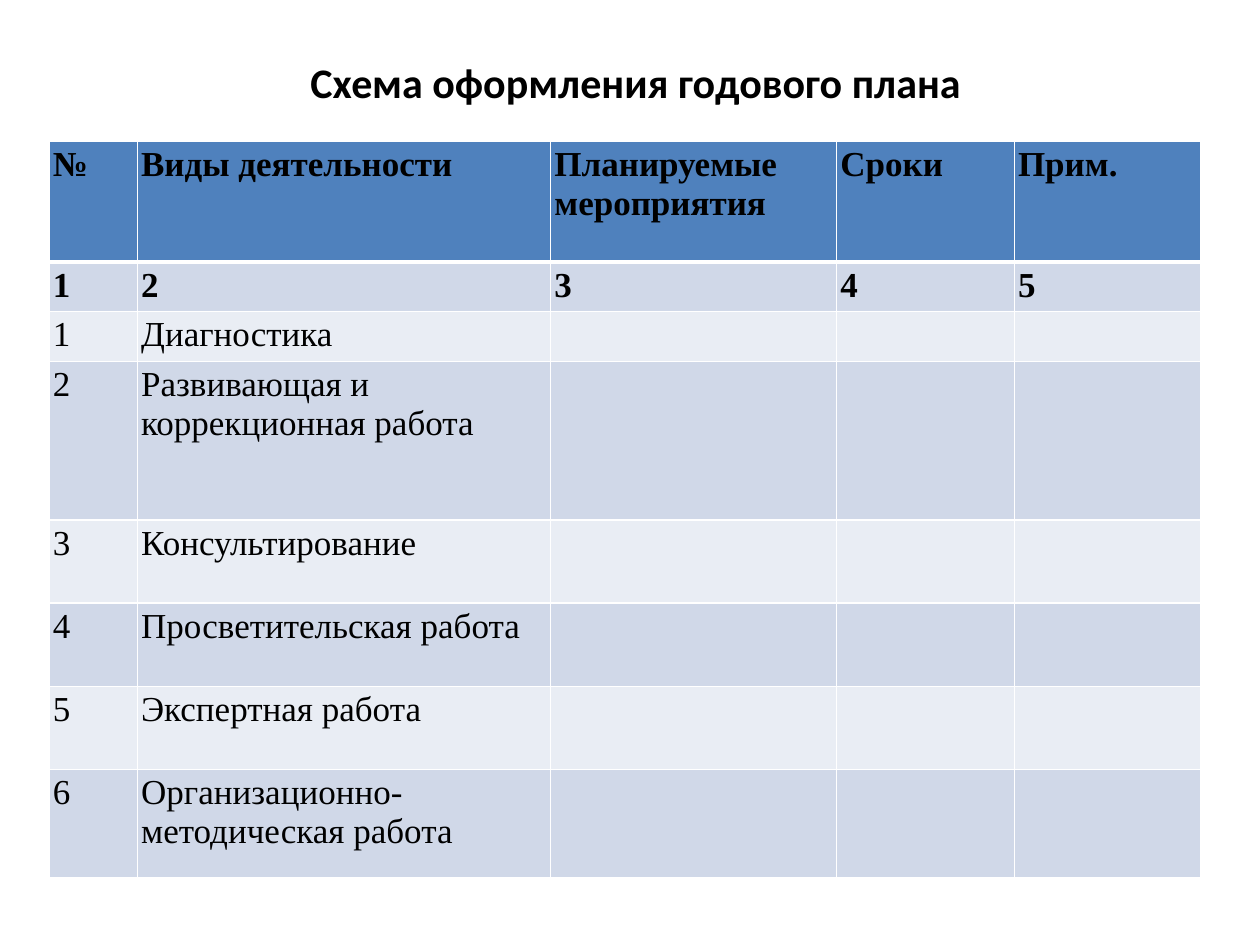
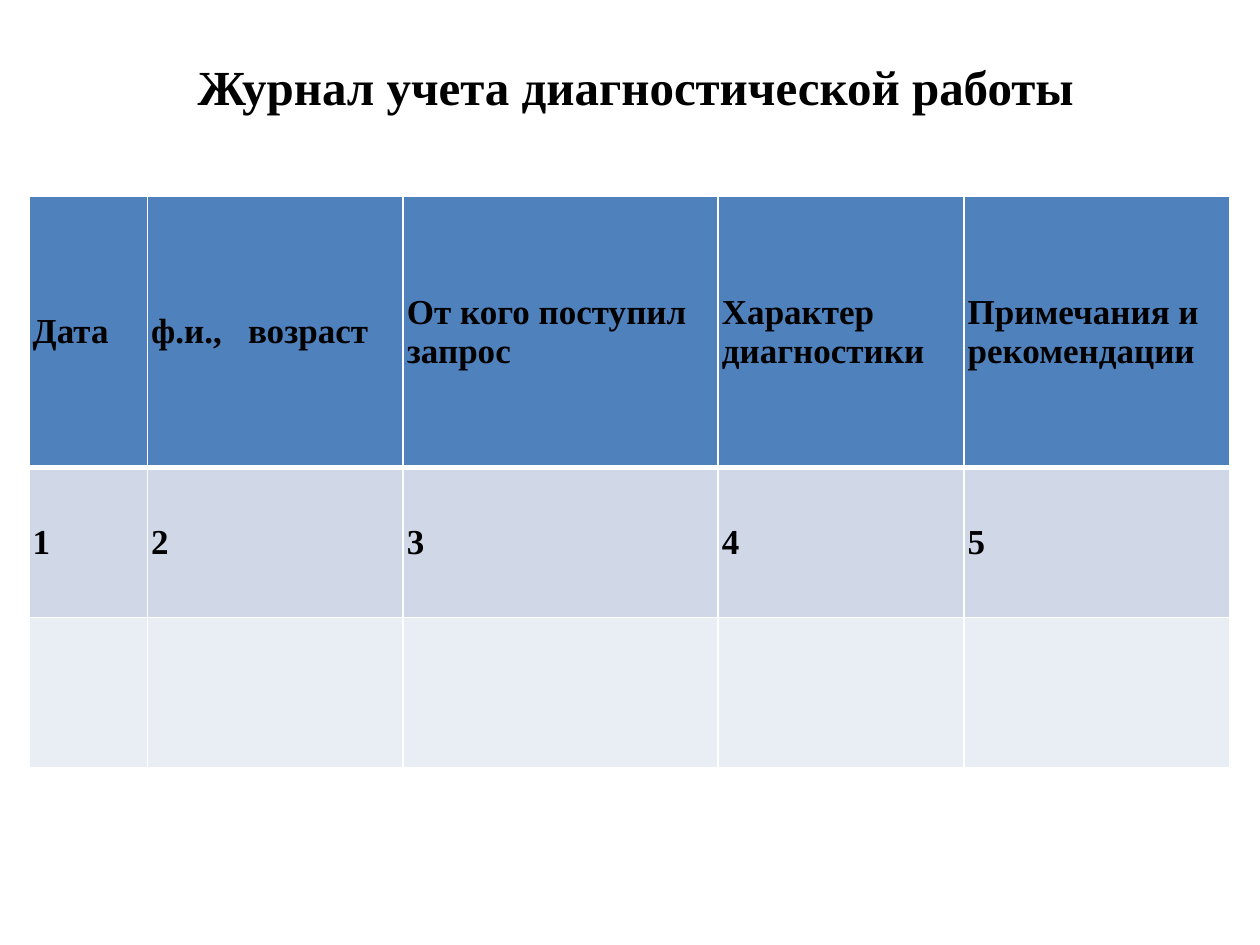
from lxml import etree
from pptx import Presentation
from pptx import util as u
from pptx.dml.color import RGBColor
from pptx.enum import text
from pptx.oxml.ns import qn

BLACK, WHITE = "000000", "FFFFFF"
HEADER_FILL = "4F81BD"
BAND_FILLS = ("E9EDF4", "D0D8E8")  # even rows, odd rows
TABLE_FONT = "Times New Roman"
CELL_MARGIN = u.Inches(0.03)
THIN, THICK = 1, 3


def color(hex_string):
    return RGBColor.from_string(hex_string)


def set_font(paragraph, name, size, bold):
    font = paragraph.font
    font.name, font.size, font.bold = name, u.Pt(size), bold
    font.color.rgb = color(BLACK)


def add_title(slide, box, words, font_name, size):
    """Bold centred heading in the middle of its box."""
    shape = slide.shapes.add_textbox(*map(u.Inches, box))
    frame = shape.text_frame
    frame.word_wrap = True
    frame.vertical_anchor = text.MSO_ANCHOR.MIDDLE
    paragraph = frame.paragraphs[0]
    paragraph.text = words
    paragraph.alignment = text.PP_ALIGN.CENTER
    set_font(paragraph, font_name, size, True)


def set_borders(cell, top, bottom):
    """White rules; the sides are always thin."""
    properties = cell._tc.get_or_add_tcPr()
    for side, points in (("L", THIN), ("R", THIN), ("T", top), ("B", bottom)):
        line = etree.SubElement(properties, qn(f"a:ln{side}"), w=str(u.Pt(points)))
        fill = etree.SubElement(line, qn("a:solidFill"))
        etree.SubElement(fill, qn("a:srgbClr"), val=WHITE)


def add_plan_table(slide, left, top, widths, heights, rows, anchor):
    """Header row, bold row of column numbers, then banded rows."""
    table = slide.shapes.add_table(
        len(heights), len(widths), u.Inches(left), u.Inches(top),
        u.Inches(sum(widths)), u.Inches(sum(heights))).table
    for column, width in zip(table.columns, widths):
        column.width = u.Inches(width)
    for row, height in zip(table.rows, heights):
        row.height = u.Inches(height)

    for row_index, words in enumerate(rows):
        for column_index in range(len(widths)):
            cell = table.cell(row_index, column_index)
            set_borders(cell, THICK if row_index == 1 else THIN,
                        THICK if row_index == 0 else THIN)
            cell.fill.solid()
            cell.fill.fore_color.rgb = color(
                BAND_FILLS[row_index % 2] if row_index else HEADER_FILL)
            cell.margin_left = cell.margin_right = CELL_MARGIN
            cell.margin_top = cell.margin_bottom = CELL_MARGIN
            cell.vertical_anchor = anchor
            paragraph = cell.text_frame.paragraphs[0]
            if column_index < len(words):
                paragraph.text = words[column_index]
            set_font(paragraph, TABLE_FONT, 20, row_index < 2)


def build_year_plan(slide):
    add_title(slide, (1.41, 0.39, 7.27, 0.51),
              "Схема оформления годового плана", "Calibri", 24)
    activities = ["Диагностика", "Развивающая и коррекционная работа",
                  "Консультирование", "Просветительская работа",
                  "Экспертная работа", "Организационно-методическая работа"]
    rows = [["№", "Виды деятельности", "Планируемые мероприятия", "Сроки", "Прим."],
            list("12345")]
    rows += [[str(number), name] for number, name in enumerate(activities, 1)]
    add_plan_table(slide, 0.39, 1.12, [0.7, 3.28, 2.27, 1.41, 1.48],
                   [0.96, 0.37, 0.37, 1.26, 0.66, 0.66, 0.66, 0.86],
                   rows, text.MSO_ANCHOR.TOP)


def build_diagnostics_journal(slide):
    add_title(slide, (1.41, 0.38, 7.27, 0.6),
              "Журнал учета диагностической работы", TABLE_FONT, 28)
    rows = [["Дата", "ф.и.,   возраст", "От кого поступил запрос",
             "Характер диагностики", "Примечания и рекомендации"],
            list("12345"), []]
    add_plan_table(slide, 0.23, 1.56, [0.94, 2.03, 2.5, 1.95, 2.11],
                   [2.15, 1.19, 1.19], rows, text.MSO_ANCHOR.MIDDLE)


def main():
    presentation = Presentation()
    presentation.slide_width = u.Inches(10)
    presentation.slide_height = u.Inches(7.5)
    blank = presentation.slide_layouts[6]
    for build in (build_year_plan, build_diagnostics_journal):
        build(presentation.slides.add_slide(blank))
    presentation.save("out.pptx")


if __name__ == "__main__":
    main()
